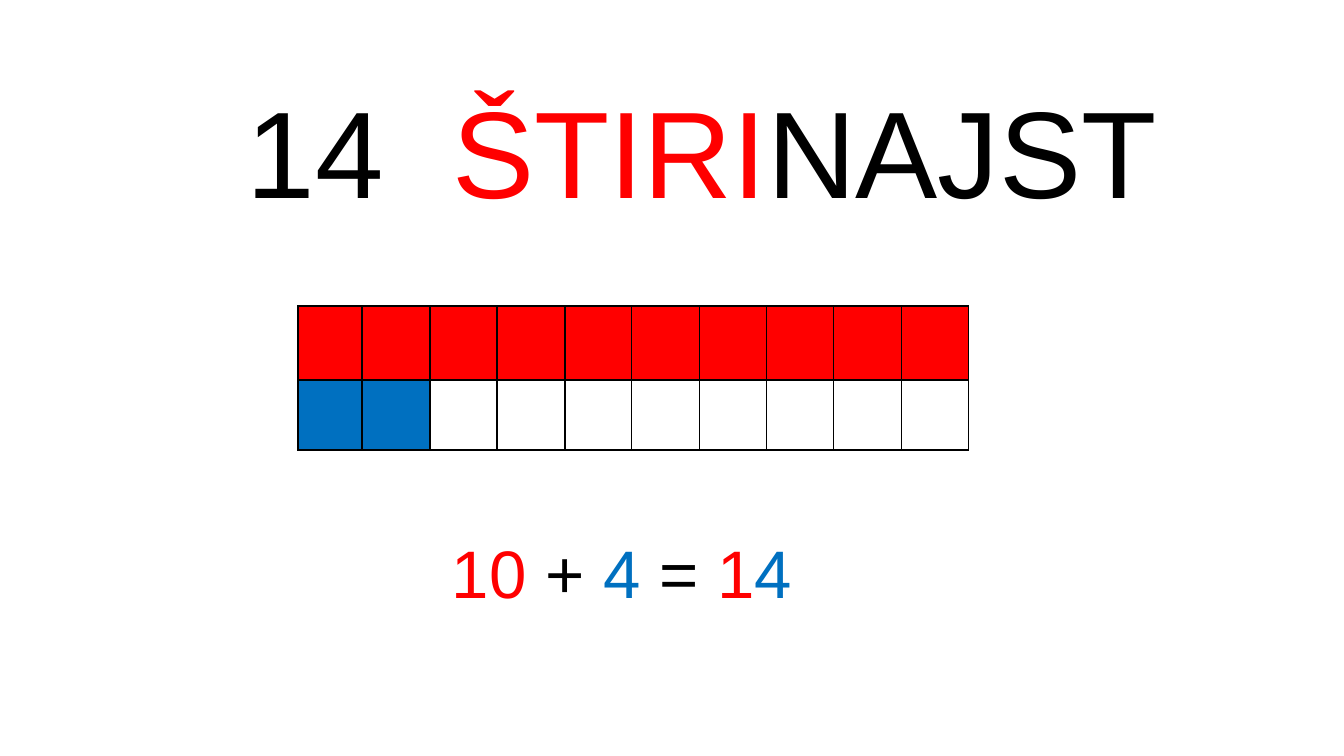
from lxml.etree import SubElement
from pptx import Presentation
from pptx.dml.color import RGBColor
from pptx.enum.text import MSO_AUTO_SIZE
from pptx.oxml.ns import qn
from pptx.util import Emu, Pt

COLORS = {"black": "000000", "red": "FF0000", "blue": "0070C0"}
FONT = "Arial"
EMU_PER_PX = 914400 / 100.8


def px(n):
    return Emu(round(n * EMU_PER_PX))


def rgb(name):
    return RGBColor.from_string(COLORS[name])


def add_run(p, text, size, color="black"):
    r = p.add_run()
    r.text = text
    r.font.name = FONT
    r.font.size = Pt(size)
    r.font.color.rgb = rgb(color)


class SlideBuilder:
    def __init__(self, prs):
        self.s = prs.slides.add_slide(prs.slide_layouts[6])

    def text(self, x, y, w, h, runs, size):
        sp = self.s.shapes.add_textbox(px(x), px(y), px(w), px(h))
        tf = sp.text_frame
        tf.word_wrap = True
        tf.auto_size = MSO_AUTO_SIZE.SHAPE_TO_FIT_TEXT
        for text, color in runs:
            add_run(tf.paragraphs[0], text, size=size, color=color)

    def border(self, cell):
        tc_pr = cell._tc.get_or_add_tcPr()
        for i, side in enumerate(("lnL", "lnR", "lnT", "lnB")):
            ln = SubElement(tc_pr, qn(f"a:{side}"), w=str(Pt(1)))
            fill = SubElement(ln, qn("a:solidFill"))
            SubElement(fill, qn("a:srgbClr"), val=COLORS["black"])
            tc_pr.insert(i, ln)  # borders come before the cell fill

    def counting_grid(self, x, y, widths, heights, filled):
        """Fill the first n cells of each row, given as (n, colour)."""
        table = self.s.shapes.add_table(
            len(heights), len(widths), px(x), px(y),
            px(sum(widths)), px(sum(heights))).table
        table.first_row = table.horz_banding = False
        for col, w in zip(table.columns, widths):
            col.width = px(w)
        for row, h, (count, color) in zip(table.rows, heights, filled):
            row.height = px(h)
            for i, cell in enumerate(row.cells):
                if i < count:
                    cell.fill.solid()
                    cell.fill.fore_color.rgb = rgb(color)
                else:
                    cell.fill.background()
                self.border(cell)


def main():
    prs = Presentation()
    prs.slide_width, prs.slide_height = px(1344), px(756)
    slide = SlideBuilder(prs)

    # Tens and ones: the last eight columns share 539 px
    edges = [round(539 * i / 8) for i in range(9)]
    widths = [64, 68] + [b - a for a, b in zip(edges, edges[1:])]
    slide.counting_grid(298, 306, widths, [74, 70],
                        [(10, "red"), (2, "blue")])

    # Number and its name
    slide.text(237, 70, 982, 159, size=88, runs=[
        ("14  ", "black"), ("ŠTIRI", "red"), ("NAJST", "black")])

    # Sum
    slide.text(442, 526, 385, 92, size=48, runs=[
        ("10", "red"), (" + ", "black"), ("4", "blue"),
        (" = ", "black"), ("1", "red"), ("4", "blue")])

    prs.save("out.pptx")


if __name__ == "__main__":
    main()
